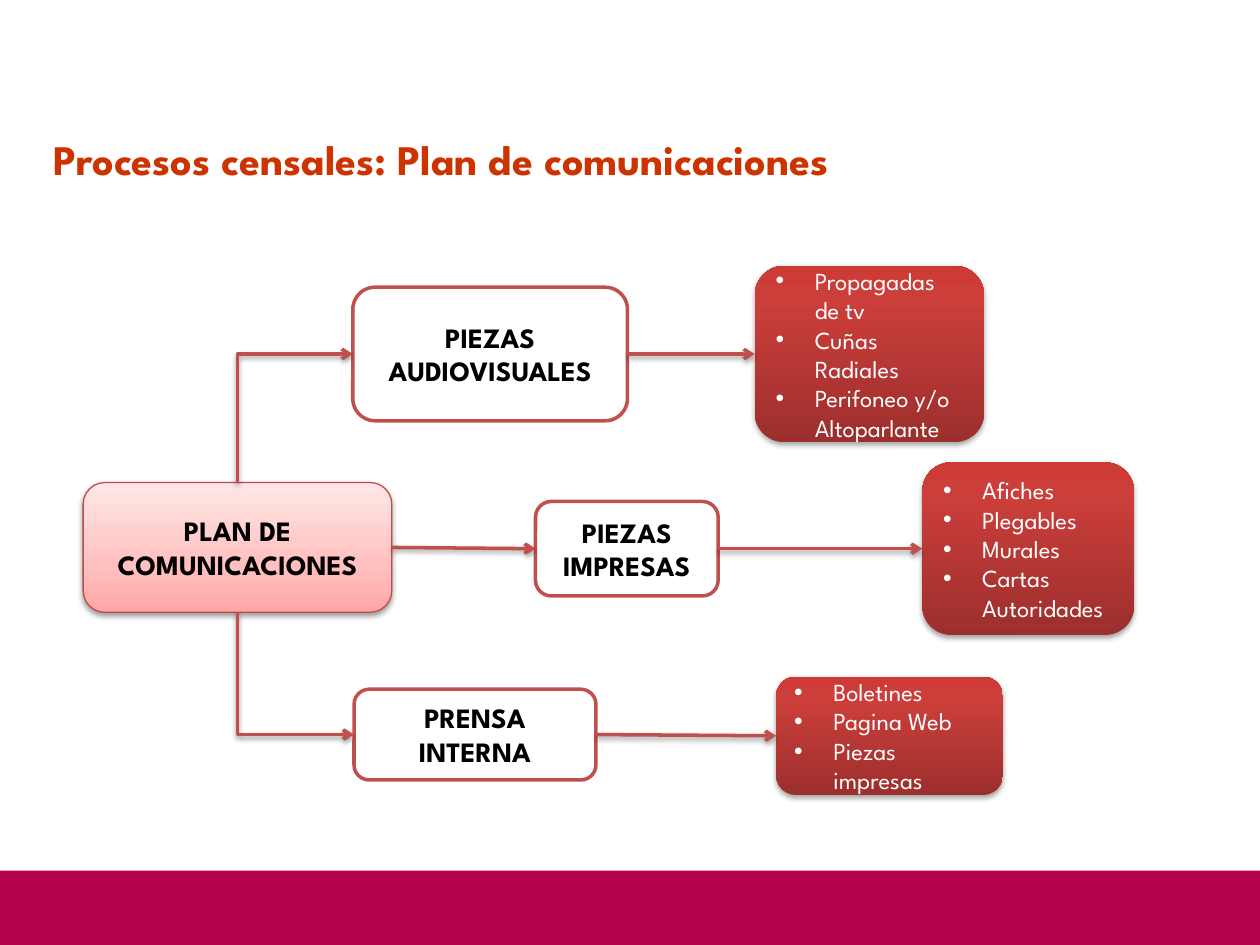
from lxml.etree import SubElement
from pptx import Presentation
from pptx.dml.color import RGBColor as RGB
from pptx.enum.shapes import MSO_CONNECTOR as LINK, MSO_SHAPE as SHAPE
from pptx.enum.text import MSO_ANCHOR as ANCHOR, MSO_AUTO_SIZE as AUTO, PP_ALIGN as ALIGN
from pptx.oxml.ns import qn
from pptx.util import Pt

PX = 9144
FONT = "League Spartan"
COLORS = {
    "band": "B6014C", "title": "CC3300", "line": "C0504D", "plan_line": "BF4C48",
    "white": "FFFFFF", "black": "000000",
}
PINK = [(0, "FFA6A5"), (35, "FFC0BF"), (100, "FFE7E7")]
RED = [(0, "9C2F2D"), (80, "CB3E3A"), (100, "CE3B37")]
TOP, LEFT, BOTTOM, RIGHT = range(4)


def add_shadow(properties, alpha):
    effects = properties.find(qn("a:effectLst"))
    if effects is None:
        effects = SubElement(properties, qn("a:effectLst"))
    shadow = SubElement(effects, qn("a:outerShdw"), blurRad="40000", dist="20000",
                        dir="5400000", rotWithShape="0")
    tint = SubElement(shadow, qn("a:srgbClr"), val=COLORS["black"])
    SubElement(tint, qn("a:alpha"), val=str(alpha * 1000))


def add_box(bounds, paragraphs, size, color, fill, line=None, width=2, alpha=0):
    box = slide.shapes.add_shape(SHAPE.ROUNDED_RECTANGLE, *[n * PX for n in bounds])
    box.shadow.inherit = False
    if isinstance(fill, str):
        box.fill.solid()
        box.fill.fore_color.rgb = RGB.from_string(fill)
    else:
        box.fill.gradient()
        box.fill.gradient_angle = 90
        stops = box.element.spPr.find(".//" + qn("a:gsLst"))
        stops.clear()
        for position, shade in fill:
            stop = SubElement(stops, qn("a:gs"), pos=str(position * 1000))
            SubElement(stop, qn("a:srgbClr"), val=shade)
    if line:
        box.line.color.rgb = RGB.from_string(line)
        box.line.width = Pt(width)
    else:
        box.line.fill.background()
    if alpha:
        add_shadow(box.element.spPr, alpha)
    frame = box.text_frame
    frame.word_wrap = True
    frame.vertical_anchor = ANCHOR.MIDDLE
    frame.text = "\n".join(paragraphs)
    for paragraph in frame.paragraphs:
        paragraph.alignment = ALIGN.CENTER if line else ALIGN.LEFT
        if not line:
            settings = paragraph._p.get_or_add_pPr()
            settings.set("marL", str(31 * PX))
            settings.set("indent", str(-31 * PX))
            SubElement(settings, qn("a:buFont"), typeface="Arial")
            SubElement(settings, qn("a:buChar"), char="•")
        font = paragraph.runs[0].font
        font.name, font.size, font.bold = FONT, Pt(size), bool(line)
        font.color.rgb = RGB.from_string(color)
    return box


deck = Presentation()
deck.slide_width, deck.slide_height = 1000 * PX, 750 * PX
slide = deck.slides.add_slide(deck.slide_layouts[6])

band = slide.shapes.add_shape(SHAPE.RECTANGLE, 0, 691 * PX, 1003 * PX, 62 * PX)
band.shadow.inherit = False
band.fill.solid()
band.fill.fore_color.rgb = RGB.from_string(COLORS["band"])
band.line.fill.background()

title = slide.shapes.add_textbox(33 * PX, 101 * PX, 866 * PX, 50 * PX).text_frame
title.word_wrap = True
title.auto_size = AUTO.SHAPE_TO_FIT_TEXT
title.text = "Procesos censales: Plan de comunicaciones"
title_font = title.paragraphs[0].runs[0].font
title_font.name, title_font.size, title_font.bold = FONT, Pt(24), True
title_font.color.rgb = RGB.from_string(COLORS["title"])

plan = add_box((66, 383, 245, 103), ["PLAN DE COMUNICACIONES"], 16, COLORS["black"],
               PINK, COLORS["plan_line"], 0.75, 38)

branches = [
    ("PIEZAS AUDIOVISUALES", (280, 228, 218, 106), (599, 211, 182, 140),
     ["Propagadas de tv", "Cuñas Radiales", "Perifoneo y/o Altoparlante"]),
    ("PIEZAS IMPRESAS", (425, 398, 145, 75), (732, 367, 168, 137),
     ["Afiches", "Plegables", "Murales", "Cartas Autoridades"]),
    ("PRENSA INTERNA", (281, 547, 192, 72), (616, 537, 180, 94),
     ["Boletines", "Pagina Web", "Piezas impresas"]),
]
links = []
for (name, piece_bounds, detail_bounds, items), plan_side in zip(branches, (TOP, RIGHT, BOTTOM)):
    piece = add_box(piece_bounds, [name], 16, COLORS["black"], COLORS["white"], COLORS["line"])
    detail = add_box(detail_bounds, items, 14, COLORS["white"], RED, alpha=35)
    links += [(plan, plan_side, piece), (piece, RIGHT, detail)]

for source, side, target in links:
    straight = side == RIGHT
    arrow = slide.shapes.add_connector(LINK.STRAIGHT if straight else LINK.ELBOW, 0, 0, 0, 0)
    arrow.begin_connect(source, side)
    arrow.end_connect(target, LEFT)
    properties = arrow.element.spPr
    if not straight:
        start_x, start_y, end_x, end_y = arrow.begin_x, arrow.begin_y, arrow.end_x, arrow.end_y
        run, rise = end_x - start_x, abs(end_y - start_y)
        arrow.left = (start_x + end_x - rise) // 2
        arrow.top = (start_y + end_y - run) // 2
        arrow.width, arrow.height = rise, run
        properties.find(qn("a:prstGeom")).set("prst", "bentConnector2")
        frame = properties.find(qn("a:xfrm"))
        frame.set("rot", "5400000" if side == TOP else "16200000")
        frame.set("flipH", "1")
        frame.set("flipV", "1" if side == TOP else "0")
    arrow.line.color.rgb = RGB.from_string(COLORS["line"])
    arrow.line.width = Pt(2)
    SubElement(properties.find(qn("a:ln")), qn("a:tailEnd"), type="arrow")
    add_shadow(properties, 38)

deck.save("out.pptx")
